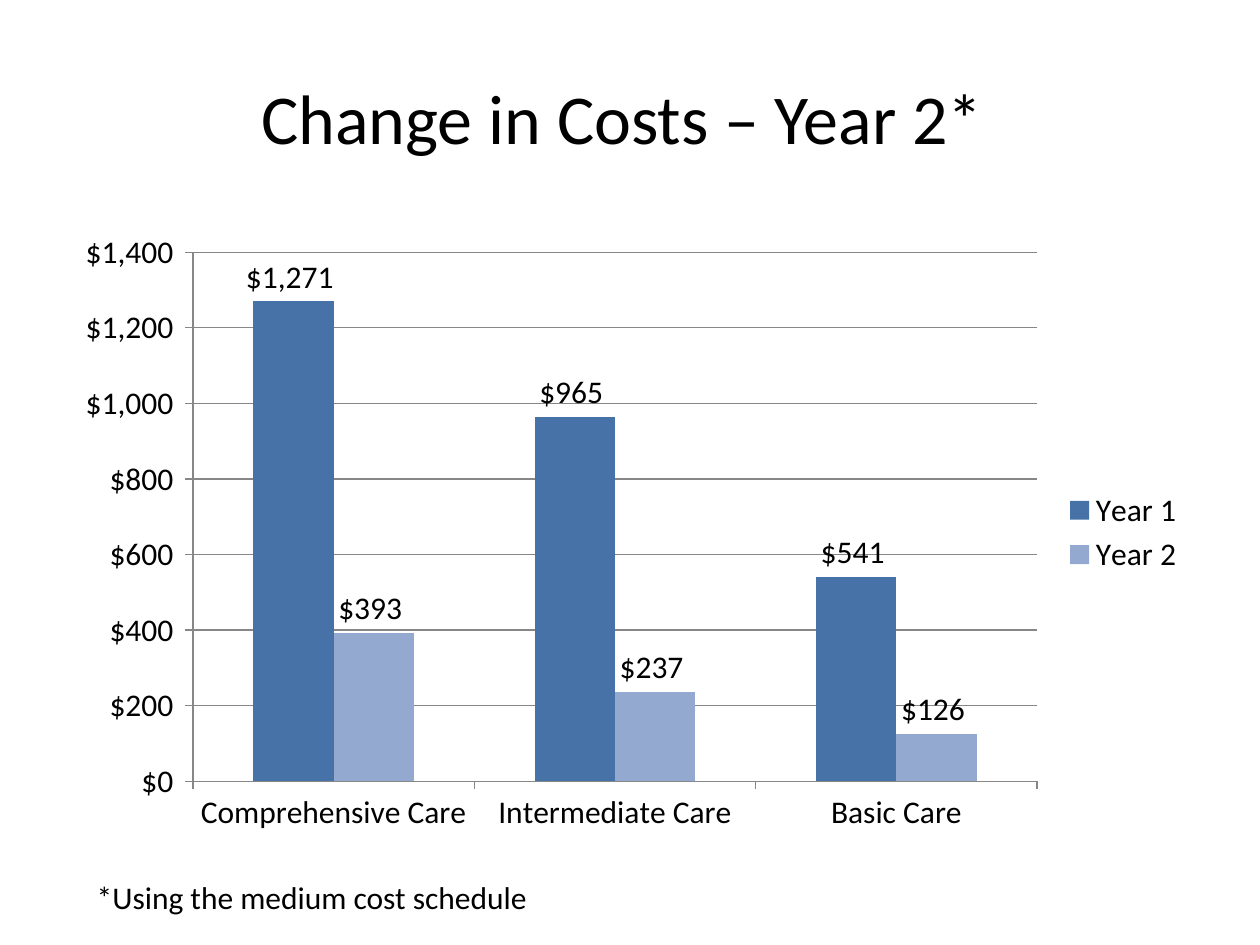
"""Build a slide comparing care plan costs in year 1 and year 2."""
from pptx import Presentation
from pptx.chart.data import CategoryChartData
from pptx.dml.color import RGBColor
from pptx.enum.chart import XL_CHART_TYPE as ChartType
from pptx.enum.chart import XL_LABEL_POSITION as LabelPos
from pptx.enum.chart import XL_LEGEND_POSITION as LegendPos
from pptx.enum.chart import XL_TICK_MARK as Tick
from pptx.enum.text import MSO_ANCHOR as Anchor
from pptx.enum.text import PP_ALIGN as Align
from pptx.util import Cm, Pt

TITLE = "Change in Costs – Year 2* "
FOOTNOTE = "*Using the medium cost schedule"
PLANS = ["Comprehensive Care", "Intermediate Care", "Basic Care"]
BLACK = RGBColor(0x00, 0x00, 0x00)
GRAY = RGBColor(0x87, 0x87, 0x87)
BLUE = RGBColor(0x46, 0x72, 0xA8)
LIGHT_BLUE = RGBColor(0x93, 0xA9, 0xCF)
COSTS = [
    ("Year 1", [1271, 965, 541], BLUE),
    ("Year 2", [393, 237, 126], LIGHT_BLUE),
]
FONT = "Calibri"
DOLLARS = '"$"#,##0_);[Red]\\("$"#,##0\\)'
MARGIN, WIDTH = Cm(1.27), Cm(22.86)


def format_font(font, size=18):
    font.name = FONT
    font.size = Pt(size)
    font.color.rgb = BLACK


def write(s, text, size=18, align=Align.LEFT, anchor=Anchor.TOP):
    tf = s.text_frame
    tf.word_wrap = True
    tf.vertical_anchor = anchor
    p = tf.paragraphs[0]
    p.alignment = align
    r = p.add_run()
    r.text = text
    format_font(r.font, size)


def draw_line(line):
    line.color.rgb = GRAY
    line.width = Pt(0.75)


def add_cost_chart(slide):
    data = CategoryChartData(number_format=DOLLARS)
    data.categories = PLANS
    for name, values, _ in COSTS:
        data.add_series(name, values)
    chart = slide.shapes.add_chart(
        ChartType.COLUMN_CLUSTERED, MARGIN, Cm(4.45), WIDTH, Cm(12.57), data
    ).chart
    format_font(chart.font)
    chart.has_title = False
    chart.has_legend = True
    chart.legend.position = LegendPos.RIGHT
    chart.legend.include_in_layout = False

    plot = chart.plots[0]
    plot.gap_width = 150
    plot.overlap = 0
    plot.vary_by_categories = False
    for series, (_, _, color) in zip(plot.series, COSTS):
        series.format.fill.solid()
        series.format.fill.fore_color.rgb = color
        labels = series.data_labels
        labels.show_value = True
        labels.position = LabelPos.OUTSIDE_END
        labels.number_format = DOLLARS
        labels.number_format_is_linked = False
        format_font(labels.font)

    for axis in (chart.category_axis, chart.value_axis):
        axis.major_tick_mark = Tick.OUTSIDE
        axis.minor_tick_mark = Tick.NONE
        draw_line(axis.format.line)
    axis = chart.value_axis
    axis.minimum_scale, axis.maximum_scale, axis.major_unit = 0, 1400, 200
    axis.tick_labels.number_format = DOLLARS
    axis.tick_labels.number_format_is_linked = False
    axis.has_major_gridlines = True
    draw_line(axis.major_gridlines.format.line)


def main():
    prs = Presentation()
    prs.slide_width, prs.slide_height = Cm(25.4), Cm(19.05)
    slide = prs.slides.add_slide(prs.slide_layouts[5])
    title = slide.shapes.title
    title.left, title.top = MARGIN, Cm(0.76)
    title.width, title.height = WIDTH, Cm(3.18)
    write(title, TITLE, size=40, align=Align.CENTER, anchor=Anchor.MIDDLE)
    add_cost_chart(slide)
    note = slide.shapes.add_textbox(Cm(1.7), Cm(17.58), Cm(21.16), Cm(1.02))
    write(note, FOOTNOTE)
    prs.save("out.pptx")


if __name__ == "__main__":
    main()
